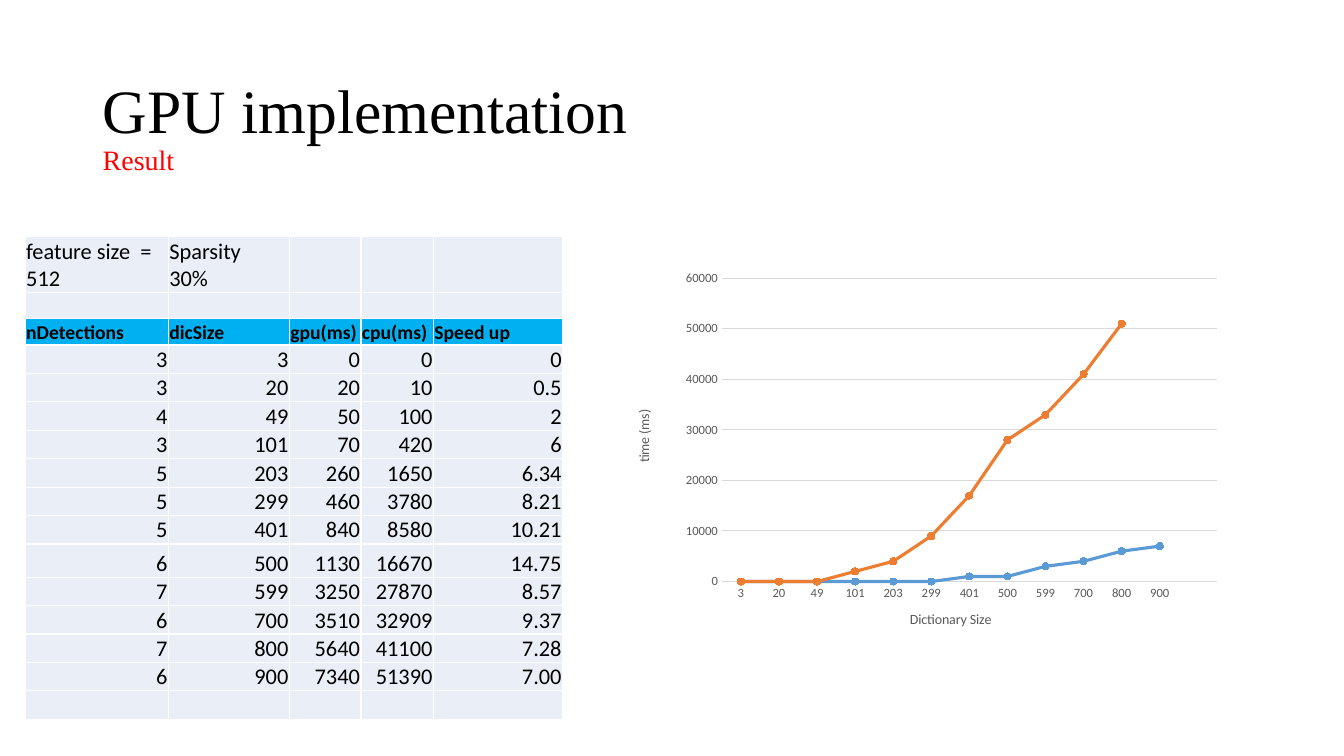
import pptx
import pptx.chart.data
import pptx.dml.color
import pptx.enum.chart
import pptx.enum.text
import pptx.oxml
import pptx.oxml.ns
import pptx.util
from pptx.util import Inches

HEADER = ["nDetections", "dicSize", "gpu(ms)", "cpu(ms)", "Speed up"]
RESULTS = [
    (3, 3, 0, 0, "0"),
    (3, 20, 20, 10, "0.5"),
    (4, 49, 50, 100, "2"),
    (3, 101, 70, 420, "6"),
    (5, 203, 260, 1650, "6.34"),
    (5, 299, 460, 3780, "8.21"),
    (5, 401, 840, 8580, "10.21"),
    (6, 500, 1130, 16670, "14.75"),
    (7, 599, 3250, 27870, "8.57"),
    (6, 700, 3510, 32909, "9.37"),
    (7, 800, 5640, 41100, "7.28"),
    (6, 900, 7340, 51390, "7.00"),
]
BLANK = [""] * 5
ROWS = [["feature size  = 512", "Sparsity  30%", "", "", ""], BLANK, HEADER, *RESULTS, BLANK]
HEADER_ROW = 2
TALL_ROW = 10
COLUMN_WIDTHS = [1.42, 1.2, 0.71, 0.72, 1.28]


def rgb(value):
    """Return the colour for a hex string."""
    return pptx.dml.color.RGBColor.from_string(value)


def style_font(font, name, size, color, bold=False):
    """Set the name, size, colour and weight of a font."""
    font.name = name
    font.size = pptx.util.Pt(size)
    font.color.rgb = rgb(color)
    font.bold = bold


def element(xml):
    """Parse XML that uses the a and c prefixes."""
    tag, rest = xml.split(">", 1)
    return pptx.oxml.parse_xml(f"{tag} {pptx.oxml.ns.nsdecls('a', 'c')}>{rest}")


def add_title(slide, left, top, width, height):
    """Add the slide title with its red subtitle line."""
    box = slide.shapes.add_textbox(Inches(left), Inches(top), Inches(width), Inches(height))
    tf = box.text_frame
    tf.word_wrap = True
    tf.vertical_anchor = pptx.enum.text.MSO_ANCHOR.MIDDLE
    p = tf.paragraphs[0]
    p.text = "GPU implementation\vResult"
    p.line_spacing = 0.9
    for r, size, color in zip(p.runs, (44, 20), ("000000", "FF0000")):
        style_font(r.font, "Times New Roman", size, color)


def fill_cell(cell, text, header, numeric):
    """Write one table cell with its borders, fill and font."""
    cell.margin_left = cell.margin_right = cell.margin_top = Inches(0.01)
    cell.margin_bottom = 0
    cell.vertical_anchor = pptx.enum.text.MSO_ANCHOR.BOTTOM
    tcPr = cell._tc.get_or_add_tcPr()
    for side in "LRTB":
        tcPr.append(element(f'<a:ln{side} w="12700"><a:solidFill><a:srgbClr val="FFFFFF"/>'
                            f'</a:solidFill></a:ln{side}>'))
    cell.fill.solid()
    cell.fill.fore_color.rgb = rgb("00B0F0" if header else "EAEFF7")
    p = cell.text_frame.paragraphs[0]
    if not text:
        size = 1600 if numeric else 1400
        p._p.append(element(f'<a:endParaRPr sz="{size}"><a:latin typeface="Calibri"/></a:endParaRPr>'))
        return
    p.text = text
    if numeric:
        p.alignment = pptx.enum.text.PP_ALIGN.RIGHT
    style_font(p.runs[0].font, "Calibri", 14 if header else 16, "000000", header)


def add_results_table(slide, left, top, width, height):
    """Add the table of timings."""
    frame = slide.shapes.add_table(len(ROWS), len(HEADER), Inches(left), Inches(top),
                                   Inches(width), Inches(height))
    table = frame.table
    table.first_row = table.horz_banding = False
    for column, column_width in zip(table.columns, COLUMN_WIDTHS):
        column.width = Inches(column_width)
    for i, values in enumerate(ROWS):
        table.rows[i].height = Inches(0.33 if i == TALL_ROW else 0.26)
        for j, value in enumerate(values):
            fill_cell(table.cell(i, j), str(value), i == HEADER_ROW, i > HEADER_ROW)


def place(parent, index, target="", **fractions):
    """Give a chart part a manual layout, in fractions of the chart."""
    for old in parent.findall(pptx.oxml.ns.qn("c:layout")):
        parent.remove(old)
    values = "".join(f'<c:{name} val="{value}"/>' for name, value in fractions.items())
    parent.insert(index, element(
        f'<c:layout><c:manualLayout>{target}<c:xMode val="edge"/><c:yMode val="edge"/>'
        f'{values}</c:manualLayout></c:layout>'))


def style_axis(axis, title, x, y):
    """Set an axis title, its place, and the label font."""
    tf = axis.axis_title.text_frame
    tf.text = title
    style_font(tf.paragraphs[0].runs[0].font, "Calibri", 10, "595959")
    place(axis.axis_title._element, 1, x=x, y=y)
    style_font(axis.tick_labels.font, "Calibri", 9, "595959")
    axis.major_tick_mark = pptx.enum.chart.XL_TICK_MARK.NONE


def style_line(line, color, width):
    """Set the colour and width of a line."""
    line.color.rgb = rgb(color)
    line.width = pptx.util.Pt(width)


def add_time_chart(slide, left, top, width, height):
    """Add the line chart of time, in whole thousands, against dictionary size."""
    gpu = [round(row[2], -3) for row in RESULTS]
    cpu = [round(row[3], -3) for row in RESULTS]
    data = pptx.chart.data.CategoryChartData()
    data.categories = [str(row[1]) for row in RESULTS] + [""]
    data.add_series("Series 1", gpu + [None])
    data.add_series("Series 2", cpu[1:] + [None, None])
    chart = slide.shapes.add_chart(
        pptx.enum.chart.XL_CHART_TYPE.LINE_MARKERS, Inches(left), Inches(top),
        Inches(width), Inches(height), data).chart
    chart.has_legend = chart.has_title = False
    style_font(chart.font, "Calibri", 10, "000000")
    plot = chart.plots[0]
    plot.vary_by_categories = False
    for series, color in zip(plot.series, ("5B9BD5", "ED7D31")):
        series.smooth = False
        style_line(series.format.line, color, 2.25)
        series.marker.style = pptx.enum.chart.XL_MARKER_STYLE.CIRCLE
        series.marker.size = 5
        series.marker.format.fill.solid()
        series.marker.format.fill.fore_color.rgb = rgb(color)
        style_line(series.marker.format.line, color, 0.75)
    style_axis(chart.category_axis, "Dictionary Size", 2.92 / width, 3.41 / height)
    style_line(chart.category_axis.format.line, "D9D9D9", 0.75)
    axis = chart.value_axis
    style_axis(axis, "time (ms)", 0.19 / width, 1.42 / height)
    axis.format.line.fill.background()
    axis.minimum_scale, axis.maximum_scale, axis.major_unit = 0, 60000, 10000
    style_line(axis.major_gridlines.format.line, "D9D9D9", 0.75)
    place(chart._chartSpace.chart.plotArea, 0, '<c:layoutTarget val="inner"/>',
          x=1.08 / width, y=0.14 / height, w=4.91 / width, h=3.01 / height)


def main():
    """Build the slide and save it."""
    prs = pptx.Presentation()
    prs.slide_width, prs.slide_height = Inches(13.33), Inches(7.5)
    slide = prs.slides.add_slide(prs.slide_layouts[6])
    add_results_table(slide, 0.25, 2.35, 5.33, 4.23)
    add_title(slide, 0.92, 0.55, 11.5, 1.45)
    add_time_chart(slide, 6.08, 2.62, 6.11, 3.84)
    prs.save("out.pptx")


if __name__ == "__main__":
    main()
